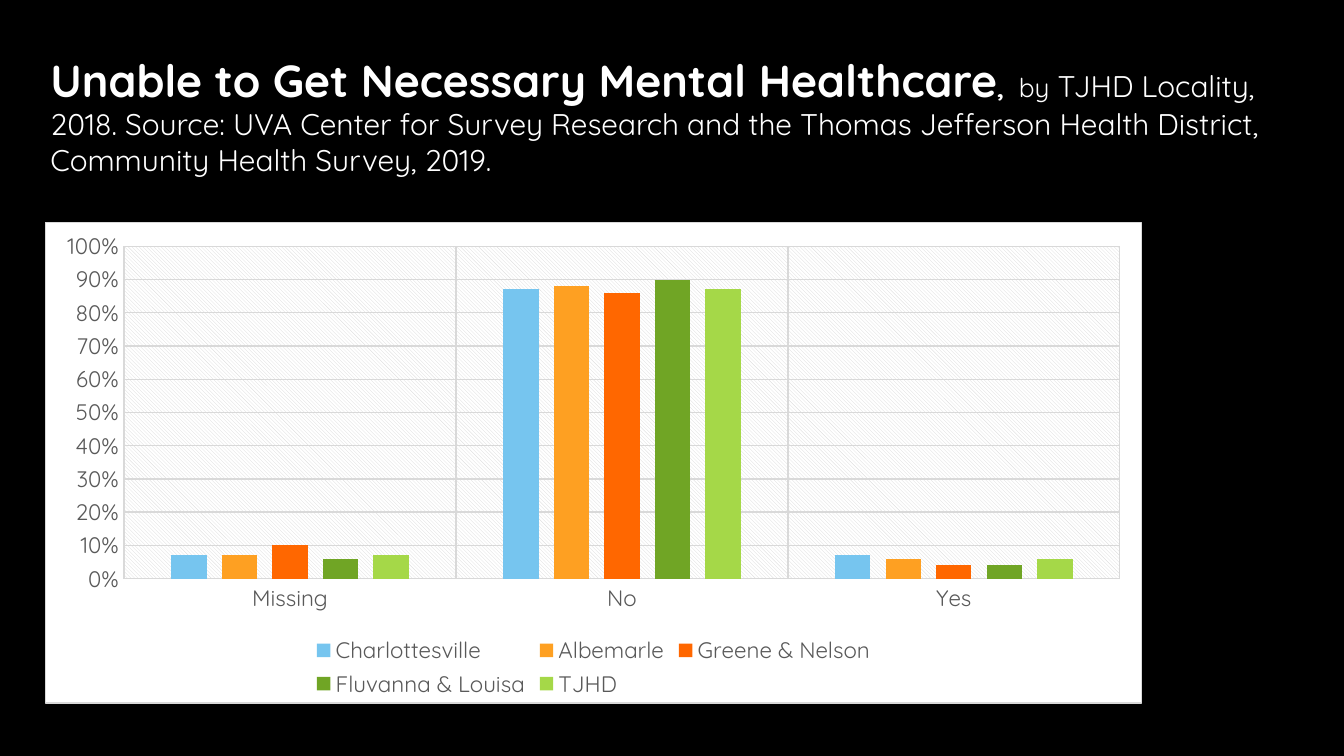
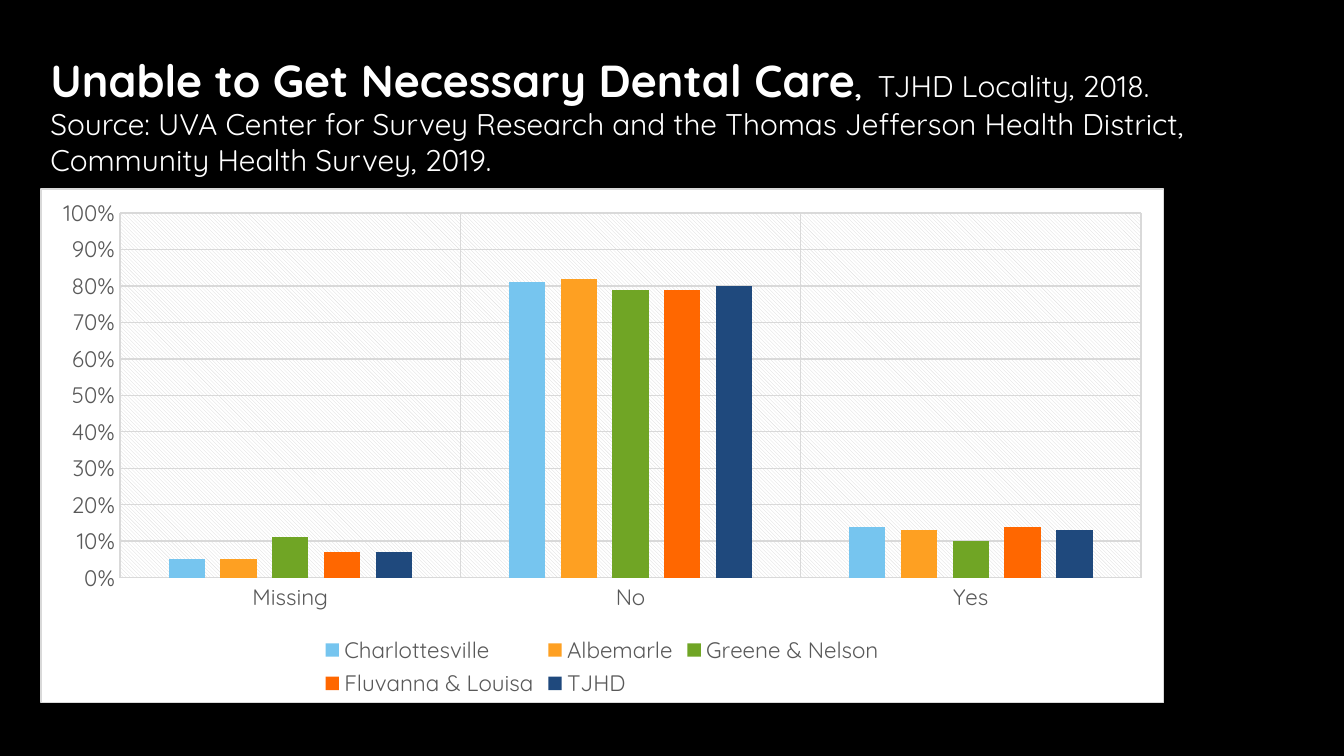
"""Build two survey slides, each with a title and a clustered column chart."""
import pptx
import pptx.chart.data
import pptx.dml.color
import pptx.enum.chart
import pptx.enum.shapes
import pptx.enum.text
import pptx.oxml
import pptx.oxml.ns
import pptx.util

Pt = pptx.util.Pt
FONT = "Quicksand"
BLACK, WHITE, GRID, LABEL = "000000", "FFFFFF", "D9D9D9", "595959"
BLUE, AMBER, ORANGE, GREEN, LIME, NAVY = "76C5EF", "FEA022", "FF6700", "70A525", "A5D848", "1F497D"
LOCALITIES = ["Charlottesville", "Albemarle", "Greene & Nelson", "Fluvanna & Louisa", "TJHD"]
ANSWERS = ["Missing", "No", "Yes"]
SOURCE = ("Source: UVA Center for Survey Research and the Thomas Jefferson Health District, "
          "Community Health Survey, 2019.")

NAMESPACES = pptx.oxml.ns.nsdecls("c", "a")
CHART_FRAME = f"""<c:spPr {NAMESPACES}>
  <a:solidFill><a:srgbClr val="{WHITE}"/></a:solidFill>
  <a:ln w="9525"><a:solidFill><a:srgbClr val="{GRID}"/></a:solidFill></a:ln>
</c:spPr>"""
PLOT_HATCH = f"""<c:spPr {NAMESPACES}>
  <a:pattFill prst="ltDnDiag">
    <a:fgClr><a:srgbClr val="{GRID}"/></a:fgClr><a:bgClr><a:srgbClr val="{WHITE}"/></a:bgClr>
  </a:pattFill>
  <a:ln><a:noFill/></a:ln>
</c:spPr>"""

SLIDES = [
    {
        "title": [
            [("Unable to Get Necessary Mental Healthcare", 24, True), (", ", 14, True),
             (" by", 14, False), (" TJHD Locality, 2018. " + SOURCE, 16, False)],
        ],
        "place": (24, 119, 588, 258),
        "colors": [BLUE, AMBER, ORANGE, GREEN, LIME],
        "values": [(0.07, 0.87, 0.07), (0.07, 0.88, 0.06), (0.1, 0.86, 0.04),
                   (0.06, 0.9, 0.04), (0.07, 0.87, 0.06)],
    },
    {
        "title": [
            [("Unable to Get Necessary Dental Care", 24, True), (", ", 14, True),
             (" TJHD Locality, 2018.", 16, False)],
            [(SOURCE, 16, False)],
        ],
        "place": (21.6, 100.8, 602, 276),
        "colors": [BLUE, AMBER, GREEN, ORANGE, NAVY],
        "values": [(0.05, 0.81, 0.14), (0.05, 0.82, 0.13), (0.11, 0.79, 0.1),
                   (0.07, 0.79, 0.14), (0.07, 0.8, 0.13)],
    },
]


def rgb(color):
    return pptx.dml.color.RGBColor.from_string(color)


def style(text, size, color, bold=False):
    text.font.name = FONT
    text.font.size = Pt(size)
    text.font.bold = bold
    text.font.color.rgb = rgb(color)


deck = pptx.Presentation()
deck.slide_width, deck.slide_height = Pt(720), Pt(405)

for content in SLIDES:
    page = deck.slides.add_slide(deck.slide_layouts[6])
    page.background.fill.solid()
    page.background.fill.fore_color.rgb = rgb(BLACK)

    box = page.shapes.add_shape(pptx.enum.shapes.MSO_SHAPE.RECTANGLE, Pt(24), Pt(25), Pt(672), Pt(66))
    box.shadow.inherit = False
    box.fill.solid()
    box.fill.fore_color.rgb = rgb(BLACK)
    box.line.fill.background()
    frame = box.text_frame
    frame.word_wrap = True
    frame.vertical_anchor = pptx.enum.text.MSO_ANCHOR.TOP
    frame.margin_left = frame.margin_right = frame.margin_top = frame.margin_bottom = Pt(3)
    for index, spans in enumerate(content["title"]):
        para = frame.add_paragraph() if index else frame.paragraphs[0]
        para.alignment = pptx.enum.text.PP_ALIGN.LEFT
        for words, size, bold in spans:
            span = para.add_run()
            span.text = words
            style(span, size, WHITE, bold=bold)

    data = pptx.chart.data.CategoryChartData(number_format="0%")
    data.categories = ANSWERS
    for locality, values in zip(LOCALITIES, content["values"]):
        data.add_series(locality, values)
    chart = page.shapes.add_chart(pptx.enum.chart.XL_CHART_TYPE.COLUMN_CLUSTERED,
                                  *map(Pt, content["place"]), data).chart
    style(chart, 10, WHITE)
    chart.has_title = False
    chart.has_legend = True
    chart.legend.position = pptx.enum.chart.XL_LEGEND_POSITION.BOTTOM
    chart.legend.include_in_layout = False
    style(chart.legend, 12, LABEL)

    for axis in (chart.category_axis, chart.value_axis):
        style(axis.tick_labels, 12, LABEL)
        axis.major_tick_mark = pptx.enum.chart.XL_TICK_MARK.NONE
        axis.minor_tick_mark = pptx.enum.chart.XL_TICK_MARK.NONE
        axis.has_major_gridlines = True
        for line in (axis.format.line, axis.major_gridlines.format.line):
            line.color.rgb = rgb(GRID)
            line.width = Pt(0.75)
    chart.value_axis.format.line.fill.background()
    chart.value_axis.minimum_scale, chart.value_axis.maximum_scale = 0, 1
    chart.value_axis.major_unit = 0.1
    chart.value_axis.tick_labels.number_format = "0%"
    chart.value_axis.tick_labels.number_format_is_linked = False

    plot = chart.plots[0]
    plot.gap_width, plot.overlap = 267, -43
    plot.vary_by_categories = False
    for series, color in zip(plot.series, content["colors"]):
        series.format.fill.solid()
        series.format.fill.fore_color.rgb = rgb(color)

    body = chart.element.find(pptx.oxml.ns.qn("c:chart"))
    body.addnext(pptx.oxml.parse_xml(CHART_FRAME))
    body.find(pptx.oxml.ns.qn("c:plotArea")).append(pptx.oxml.parse_xml(PLOT_HATCH))

deck.save("out.pptx")
